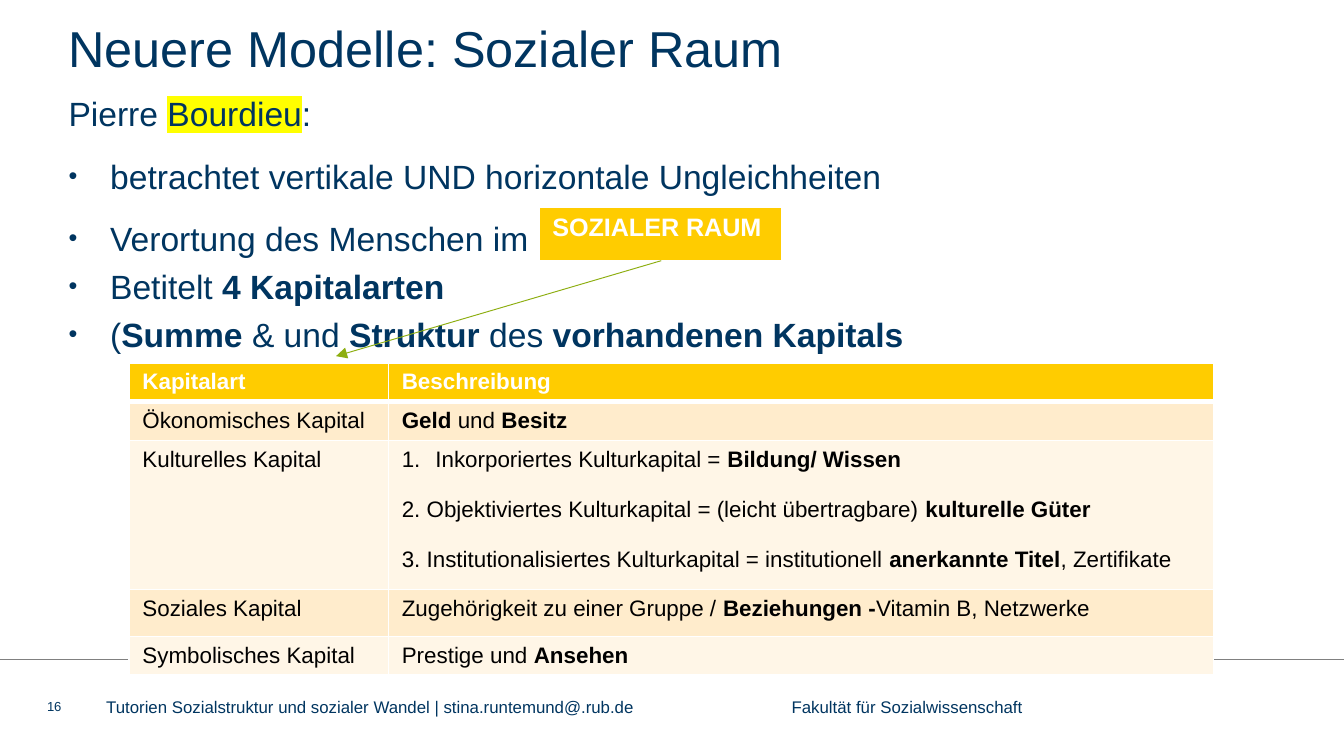
from dataclasses import dataclass
from typing import Optional

from lxml.etree import SubElement
from pptx import Presentation
from pptx.dml.color import RGBColor
from pptx.enum.shapes import MSO_CONNECTOR
from pptx.enum.text import MSO_ANCHOR, MSO_AUTO_SIZE, PP_ALIGN
from pptx.oxml.ns import qn
from pptx.util import Inches, Pt


@dataclass(frozen=True)
class Theme:
    font: str = "Arial"
    navy: str = "003560"
    green: str = "8DAE10"
    grey: str = "808080"
    gold: str = "FFCC00"
    white: str = "FFFFFF"
    black: str = "000000"
    highlight: str = "FFFF00"
    bands: tuple = ("FFECCC", "FFF6E7")
    title_size: float = 27
    body_size: float = 18
    label_size: float = 13.5
    table_size: float = 12
    footer_size: float = 9
    number_size: float = 7


THEME = Theme()


@dataclass(frozen=True)
class Style:
    size: float
    color: str = THEME.navy
    bold: Optional[bool] = None
    line_spacing: Optional[float] = None


@dataclass(frozen=True)
class Line:
    """One paragraph; text between ** marks is emphasised."""
    text: str
    after: float = 0
    before: float = 0
    bullet: str = ""
    indent: float = 0
    highlighted: bool = False
    tab_stop: float = 0


@dataclass(frozen=True)
class Box:
    left: float
    top: float
    width: float
    height: float

    def lengths(self) -> tuple:
        return tuple(map(Inches, (self.left, self.top, self.width, self.height)))


BODY = (
    Line("Pierre **Bourdieu**:", after=12, highlighted=True),
    Line("betrachtet vertikale UND horizontale Ungleichheiten", 12, bullet="•", indent=0.31),
    Line("Verortung des Menschen im", 4, bullet="•", indent=0.31),
    Line("Betitelt **4 Kapitalarten**", 4, bullet="•", indent=0.31),
    Line("(**Summe** & und **Struktur **des **vorhandenen Kapitals**", 4, bullet="•", indent=0.31),
)
CAPITAL_HEADER = ("Kapitalart", "Beschreibung")
CAPITAL_KINDS = (
    ("Ökonomisches Kapital", (Line("**Geld** und **Besitz**"),)),
    ("Kulturelles Kapital", (
        Line("Inkorporiertes Kulturkapital = **Bildung/ Wissen**", bullet="1.", indent=0.25),
        Line("2. Objektiviertes Kulturkapital = (leicht übertragbare) **kulturelle Güter**", before=13.4),
        Line("3. Institutionalisiertes Kulturkapital = institutionell **anerkannte Titel**, Zertifikate",
             before=13.4),
    )),
    ("Soziales Kapital", (Line("Zugehörigkeit zu einer Gruppe / **Beziehungen -**Vitamin B, Netzwerke"),)),
    ("Symbolisches Kapital", (Line("Prestige und **Ansehen**"),)),
)
FOOTER = Line("Tutorien Sozialstruktur und sozialer Wandel | stina.runtemund@.rub.de\t"
              "Fakultät für Sozialwissenschaft", tab_stop=5.1)


def rgb(color: str) -> RGBColor:
    return RGBColor.from_string(color)


def add_bullet(paragraph, line: Line) -> None:
    properties = paragraph._p.get_or_add_pPr()
    properties.set("marL", str(Inches(line.indent)))
    properties.set("indent", str(-Inches(line.indent)))
    if line.bullet == "1.":
        SubElement(properties, qn("a:buAutoNum"), type="arabicPeriod")
    else:
        SubElement(properties, qn("a:buSzPct"), val="75000")
        SubElement(properties, qn("a:buFont"), typeface=THEME.font)
        SubElement(properties, qn("a:buChar"), char=line.bullet)


def add_tab_stop(paragraph, position: float) -> None:
    tabs = SubElement(paragraph._p.get_or_add_pPr(), qn("a:tabLst"))
    SubElement(tabs, qn("a:tab"), pos=str(Inches(position)), algn="l")


def write(frame, lines: tuple, style: Style) -> None:
    for index, line in enumerate(lines):
        paragraph = frame.add_paragraph() if index else frame.paragraphs[0]
        paragraph.alignment = PP_ALIGN.LEFT
        if line.bullet:
            add_bullet(paragraph, line)
        if line.tab_stop:
            add_tab_stop(paragraph, line.tab_stop)
        paragraph.line_spacing = style.line_spacing
        paragraph.space_before = Pt(line.before)
        paragraph.space_after = Pt(line.after)
        font = paragraph.font
        font.name, font.size, font.bold = THEME.font, Pt(style.size), style.bold
        font.color.rgb = rgb(style.color)
        for part, text in enumerate(line.text.split("**")):
            if not text:
                continue
            run = paragraph.add_run()
            run.text = text
            if part % 2 and line.highlighted:
                highlight = SubElement(run._r.get_or_add_rPr(), qn("a:highlight"))
                SubElement(highlight, qn("a:srgbClr"), val=THEME.highlight)
            elif part % 2:
                run.font.bold = True


def format_frame(frame, anchor: MSO_ANCHOR) -> None:
    frame.margin_left = frame.margin_top = frame.margin_right = frame.margin_bottom = 0
    frame.word_wrap, frame.auto_size, frame.vertical_anchor = True, MSO_AUTO_SIZE.NONE, anchor


def add_text(slide, box: Box, lines: tuple, style: Style, anchor=MSO_ANCHOR.TOP) -> None:
    frame = slide.shapes.add_textbox(*box.lengths()).text_frame
    format_frame(frame, anchor)
    write(frame, lines, style)


def add_line(slide, start: tuple, end: tuple, color: str, arrow: bool = False) -> None:
    points = map(Inches, (*start, *end))
    connector = slide.shapes.add_connector(MSO_CONNECTOR.STRAIGHT, *points)
    connector.line.color.rgb = rgb(color)
    connector.line.width = Pt(0.5)
    if arrow:
        SubElement(connector.line._get_or_add_ln(), qn("a:tailEnd"), type="triangle")
    SubElement(connector._element.spPr, qn("a:effectLst"))


def fill_cell(cell, lines: tuple, style: Style, fill: str, bottom_border: float = 1) -> None:
    cell.margin_left = cell.margin_right = Inches(0.1)
    cell.margin_top = cell.margin_bottom = Inches(0.05)
    properties = cell._tc.get_or_add_tcPr()
    for side, width in (("L", 1), ("R", 1), ("T", 1), ("B", bottom_border)):
        border = SubElement(properties, qn(f"a:ln{side}"), w=str(Pt(width)))
        SubElement(SubElement(border, qn("a:solidFill")), qn("a:srgbClr"), val=THEME.white)
    cell.fill.solid()
    cell.fill.fore_color.rgb = rgb(fill)
    write(cell.text_frame, lines, style)


def add_plain_table(slide, left: float, top: float, widths: tuple, heights: tuple):
    box = Box(left, top, sum(widths), sum(heights))
    table = slide.shapes.add_table(len(heights), len(widths), *box.lengths()).table
    table.first_row = table.horz_banding = False
    for column, width in zip(table.columns, widths):
        column.width = Inches(width)
    for row, height in zip(table.rows, heights):
        row.height = Inches(height)
    return table


def add_capital_table(slide) -> None:
    table = add_plain_table(slide, 0.96, 2.7, (1.93, 6.14), (0.27, 0.29, 1.11, 0.35, 0.27))
    header = Style(THEME.table_size, THEME.white, bold=True)
    content = Style(THEME.table_size, THEME.black)
    for column, text in enumerate(CAPITAL_HEADER):
        fill_cell(table.cell(0, column), (Line(text),), header, THEME.gold, bottom_border=3)
    for row, (kind, description) in enumerate(CAPITAL_KINDS, start=1):
        band = THEME.bands[(row - 1) % 2]
        fill_cell(table.cell(row, 0), (Line(kind),), content, band)
        fill_cell(table.cell(row, 1), description, content, band)


def main() -> None:
    presentation = Presentation()
    presentation.slide_width, presentation.slide_height = Pt(720), Pt(405)
    slide = presentation.slides.add_slide(presentation.slide_layouts[5])

    title = slide.shapes.title
    title.left, title.top, title.width, title.height = Box(0.51, 0.18, 8.27, 0.51).lengths()
    format_frame(title.text_frame, MSO_ANCHOR.TOP)
    write(title.text_frame, (Line("Neuere Modelle: Sozialer Raum"),),
          Style(THEME.title_size, line_spacing=0.9))

    add_line(slide, (0, 4.91), (10, 4.91), THEME.grey)
    add_text(slide, Box(0.35, 5.2, 0.28, 0.12), (Line("16"),),
             Style(THEME.number_size, line_spacing=0.9), MSO_ANCHOR.MIDDLE)
    add_text(slide, Box(0.79, 5.2, 6.89, 0.12), (FOOTER,),
             Style(THEME.footer_size), MSO_ANCHOR.MIDDLE)
    add_text(slide, Box(0.51, 0.69, 9.29, 4.02), BODY, Style(THEME.body_size))

    label = add_plain_table(slide, 4.01, 1.54, (1.81,), (0.41,))
    fill_cell(label.cell(0, 0), (Line("SOZIALER RAUM"),),
              Style(THEME.label_size, THEME.white, bold=True), THEME.gold, bottom_border=3)
    add_line(slide, (4.92, 1.94), (2.5, 2.65), THEME.green, arrow=True)
    add_capital_table(slide)
    presentation.save("out.pptx")


if __name__ == "__main__":
    main()
